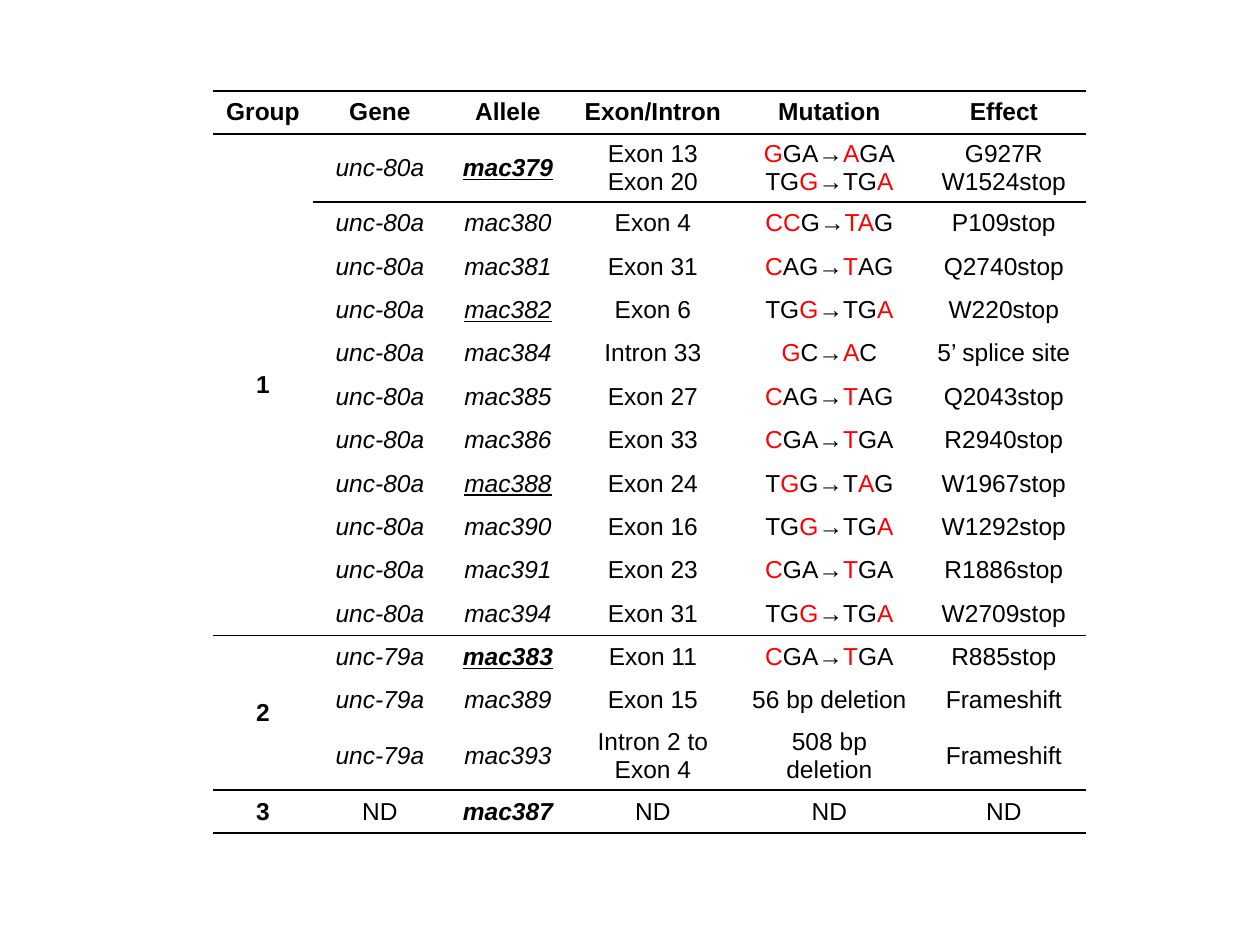
from lxml.etree import SubElement
from pptx import Presentation
from pptx.dml.color import RGBColor
from pptx.enum.text import MSO_ANCHOR, PP_ALIGN
from pptx.oxml.ns import qn
from pptx.util import Emu, Pt

PX = 914400 // 126
COLORS = {"text": "000000", "changed": "FF0000", "rule": "000000"}
COL_WIDTHS = [100, 134, 122, 168, 185, 164]
ROW_HEIGHT, TALL_HEIGHT = 43.4, 67.4

HEADERS = ["Group", "Gene", "Allele", "Exon/Intron", "Mutation", "Effect"]
# Changed bases stand between bars; a line break starts a new paragraph.
GROUPS = [
    ("1", "unc-80a", [
        ("mac379", "Exon 13\nExon 20", "|G|GA→|A|GA\nTG|G|→TG|A|", "G927R\nW1524stop"),
        ("mac380", "Exon 4", "|CC|G→|TA|G", "P109stop"),
        ("mac381", "Exon 31", "|C|AG→|T|AG", "Q2740stop"),
        ("mac382", "Exon 6", "TG|G|→TG|A|", "W220stop"),
        ("mac384", "Intron 33", "|G|C→|A|C", "5’ splice site"),
        ("mac385", "Exon 27", "|C|AG→|T|AG", "Q2043stop"),
        ("mac386", "Exon 33", "|C|GA→|T|GA", "R2940stop"),
        ("mac388", "Exon 24", "T|G|G→T|A|G", "W1967stop"),
        ("mac390", "Exon 16", "TG|G|→TG|A|", "W1292stop"),
        ("mac391", "Exon 23", "|C|GA→|T|GA", "R1886stop"),
        ("mac394", "Exon 31", "TG|G|→TG|A|", "W2709stop"),
    ]),
    ("2", "unc-79a", [
        ("mac383", "Exon 11", "|C|GA→|T|GA", "R885stop"),
        ("mac389", "Exon 15", "56 bp deletion", "Frameshift"),
        ("mac393", "Intron 2 to Exon 4", "508 bp deletion", "Frameshift"),
    ]),
    ("3", "ND", [("mac387", "ND", "ND", "ND")]),
]
TALL_ROWS = {1, 14}
BOLD_ALLELES = {"mac379", "mac383", "mac387"}
UNDERLINED_ALLELES = {"mac379", "mac382", "mac383", "mac388"}


def px(n):
    return Emu(n * PX)


def write_text(cell, text, bold=False, italic=False, underline=False, size=14):
    """Write centred paragraphs, colouring the parts between bars."""
    cell.vertical_anchor = MSO_ANCHOR.MIDDLE
    tf = cell.text_frame
    for i, line in enumerate(text.split("\n")):
        p = tf.add_paragraph() if i else tf.paragraphs[0]
        p.alignment = PP_ALIGN.CENTER
        for j, part in enumerate(line.split("|")):
            if not part:
                continue
            r = p.add_run()
            r.text = part
            r.font.name, r.font.size = "Arial", Pt(size)
            r.font.bold, r.font.italic, r.font.underline = bold, italic, underline
            color = COLORS["changed" if j % 2 else "text"]
            r.font.color.rgb = RGBColor.from_string(color)


def set_borders(cell, top, bottom):
    tc_pr = cell._tc.get_or_add_tcPr()
    sides = {"lnL": False, "lnR": False, "lnT": top, "lnB": bottom}
    for tag, ruled in sides.items():
        ln = SubElement(tc_pr, qn(f"a:{tag}"), w=str(Pt(1)))
        if ruled:
            fill = SubElement(ln, qn("a:solidFill"))
            SubElement(fill, qn("a:srgbClr"), val=COLORS["rule"])
        else:
            SubElement(ln, qn("a:noFill"))
    cell.fill.background()


def add_mutation_table(s, left, top):
    n_rows = 1 + sum(len(alleles) for _, _, alleles in GROUPS)
    heights = [TALL_HEIGHT if r in TALL_ROWS else ROW_HEIGHT for r in range(n_rows)]
    edges = [round(sum(heights[:r])) for r in range(n_rows + 1)]
    frame = s.shapes.add_table(n_rows, len(HEADERS), px(left), px(top),
                               px(sum(COL_WIDTHS)), px(edges[-1]))
    table = frame.table
    table.first_row = table.horz_banding = False
    no_style = "{2D5ABB26-0587-4C30-8999-92F81FD0307C}"
    table._tbl.tblPr.find(qn("a:tableStyleId")).text = no_style
    for col, width in zip(table.columns, COL_WIDTHS):
        col.width = px(width)
    for row, y0, y1 in zip(table.rows, edges, edges[1:]):
        row.height = px(y1 - y0)

    for c, header in enumerate(HEADERS):
        write_text(table.cell(0, c), header, bold=True)
    full_rules = {0, 1}
    r = 1
    for group, gene, alleles in GROUPS:
        write_text(table.cell(r, 0), group, bold=True)
        if len(alleles) > 1:
            table.cell(r, 0).merge(table.cell(r + len(alleles) - 1, 0))
        for allele, *details in alleles:
            write_text(table.cell(r, 1), gene, italic=gene != "ND")
            write_text(table.cell(r, 2), allele, italic=True,
                       bold=allele in BOLD_ALLELES,
                       underline=allele in UNDERLINED_ALLELES)
            for c, text in enumerate(details, 3):
                write_text(table.cell(r, c), text)
            r += 1
        full_rules.add(r)

    for r in range(n_rows):
        for c in range(len(HEADERS)):
            cell = table.cell(r, c)
            rules = full_rules | {2} if c else full_rules
            span = cell.span_height if cell.is_merge_origin else 1
            set_borders(cell, r in rules, r + span in rules)


def main():
    prs = Presentation()
    prs.slide_width, prs.slide_height = px(1260), px(945)
    s = prs.slides.add_slide(prs.slide_layouts[6])
    add_mutation_table(s, 213, 91)
    prs.save("out.pptx")


if __name__ == "__main__":
    main()
